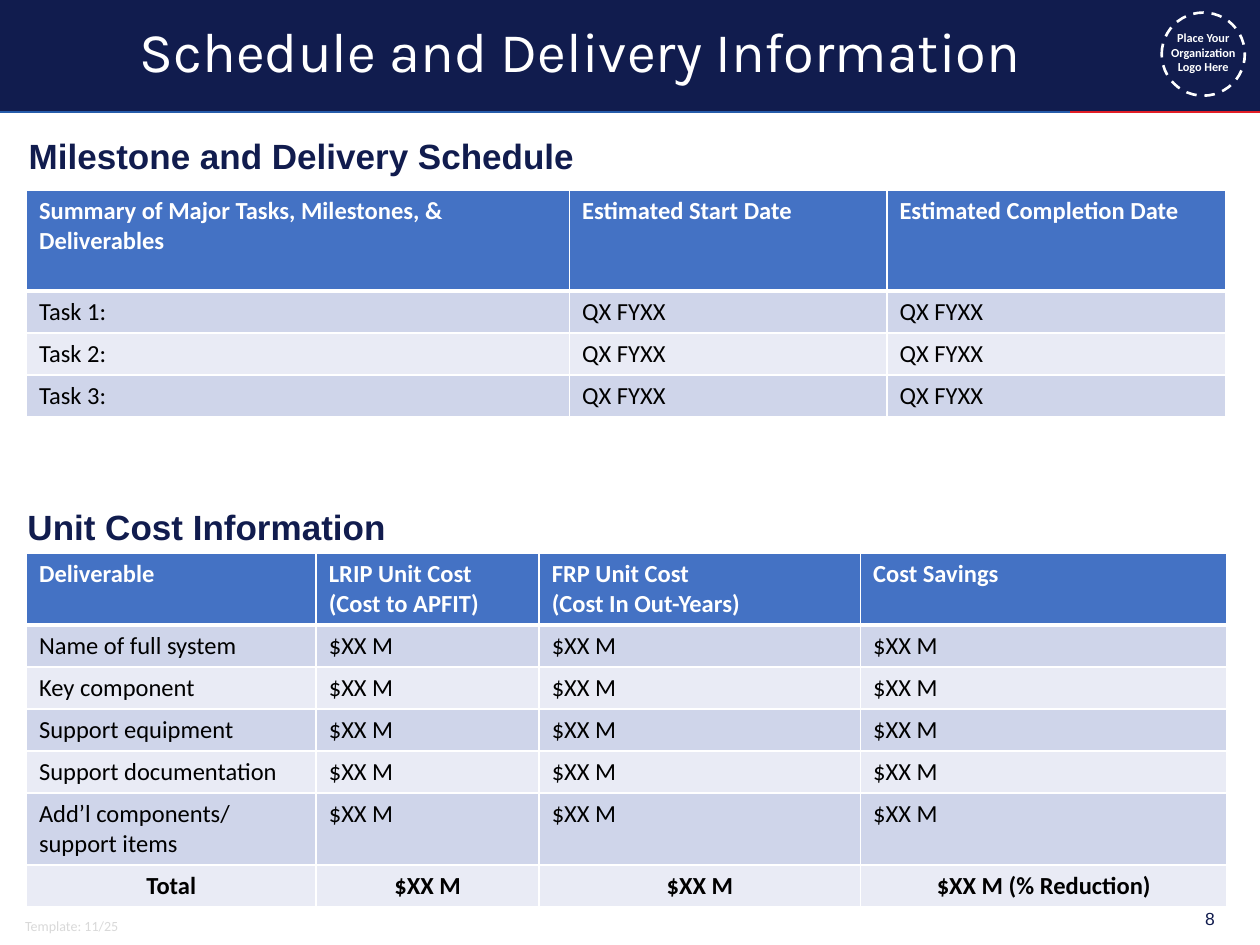
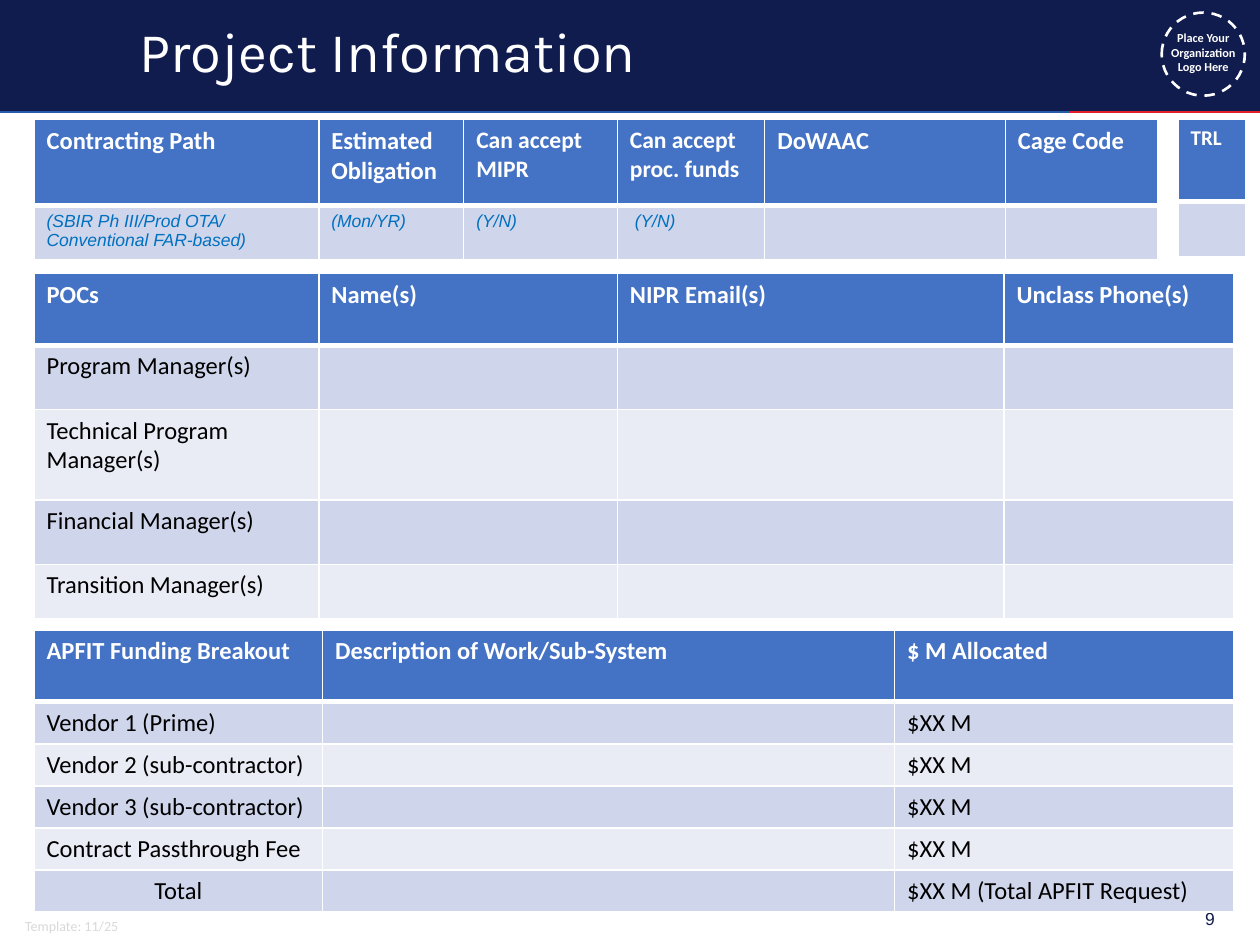
from dataclasses import dataclass, replace

from lxml.etree import SubElement
from pptx import Presentation
from pptx.dml.color import RGBColor
from pptx.enum.dml import MSO_LINE
from pptx.enum.shapes import MSO_CONNECTOR, MSO_SHAPE
from pptx.enum.text import MSO_ANCHOR, PP_ALIGN
from pptx.oxml.ns import qn
from pptx.util import Inches, Pt


@dataclass(frozen=True)
class TextStyle:
    font: str
    size: float
    color: str
    bold: bool = False
    italic: bool = False


@dataclass(frozen=True)
class Theme:
    navy: str = "111C4E"
    rule_blue: str = "265CAA"
    rule_red: str = "E21E26"
    white: str = "FFFFFF"
    header_fill: str = "4472C4"
    odd_row: str = "CFD5EA"
    even_row: str = "E9EBF5"
    title: TextStyle = TextStyle("Karla", 32, "FFFFFF")
    heading: TextStyle = TextStyle("Arial", 20, "111C4E", bold=True)
    page_number: TextStyle = TextStyle("Arial", 10, "111C4E")
    version: TextStyle = TextStyle("Calibri", 8, "D9D9D9")
    logo: TextStyle = TextStyle("Calibri", 7, "FFFFFF", bold=True)
    header: TextStyle = TextStyle("Calibri", 14, "FFFFFF", bold=True)
    body: TextStyle = TextStyle("Calibri", 14, "000000")
    hint: TextStyle = TextStyle("Arial", 10, "0070C0", italic=True)
    thin: float = 1
    thick: float = 3


THEME = Theme()

# The slide is a grid of 100 columns by 75 rows; every place is given in grid steps.
COLUMNS, ROWS = 100, 75
STEP = Inches(0.1)
BAND = 8.9
RULE_SPLIT = 84.9
LINE_ROW = 3.3      # a table row with one line of body text
TWO_LINE_ROW = 5.7  # a table row with two lines of body text


def write(frame, text, style, align=PP_ALIGN.LEFT):
    """Fill a text frame, one paragraph per line of text."""
    for index, line in enumerate(text.split("\n")):
        paragraph = frame.add_paragraph() if index else frame.paragraphs[0]
        paragraph.alignment = align
        if not line:
            SubElement(paragraph._p, qn("a:endParaRPr"), sz=str(int(style.size * 100)))
            continue
        run = paragraph.add_run()
        run.text = line
        run.font.name = style.font
        run.font.size = Pt(style.size)
        run.font.bold = style.bold
        run.font.italic = style.italic
        run.font.color.rgb = RGBColor.from_string(style.color)


def add_banded_table(slide, left, top, widths, heights, rows, body=THEME.body):
    place = [round(v * STEP) for v in (left, top, sum(widths), sum(heights))]
    table = slide.shapes.add_table(len(heights), len(widths), *place).table
    for column, width in zip(table.columns, widths):
        column.width = round(width * STEP)
    for r, (height, texts) in enumerate(zip(heights, rows)):
        table.rows[r].height = round(height * STEP)
        fill = THEME.header_fill if r == 0 else THEME.odd_row if r % 2 else THEME.even_row
        edges = {"L": THEME.thin, "R": THEME.thin,
                 "T": THEME.thick if r == 1 else THEME.thin,
                 "B": THEME.thick if r == 0 else THEME.thin}
        for c, text in enumerate(texts):
            cell = table.cell(r, c)
            properties = cell._tc.get_or_add_tcPr()
            for side, weight in edges.items():
                edge = SubElement(properties, qn(f"a:ln{side}"), w=str(Pt(weight)))
                paint = SubElement(edge, qn("a:solidFill"))
                SubElement(paint, qn("a:srgbClr"), val=THEME.white)
            cell.fill.solid()
            cell.fill.fore_color.rgb = RGBColor.from_string(fill)
            write(cell.text_frame, text, body if r else THEME.header)
    return table


deck = Presentation()
deck.slide_width, deck.slide_height = COLUMNS * STEP, ROWS * STEP

# Band, rules, logo place, title and footer, shared by both slides
pages = []
for number, title in ((8, "Schedule and Delivery Information"), (9, "Project Information")):
    slide = deck.slides.add_slide(deck.slide_layouts[6])
    pages.append(slide)

    band = slide.shapes.add_shape(MSO_SHAPE.RECTANGLE, 0, 0, deck.slide_width, round(BAND * STEP))
    band.shadow.inherit = False
    band.fill.solid()
    band.fill.fore_color.rgb = RGBColor.from_string(THEME.navy)
    band.line.fill.background()

    for start, color in ((0, THEME.rule_blue), (COLUMNS, THEME.rule_red)):
        ends = [round(v * STEP) for v in (start, BAND, RULE_SPLIT, BAND)]
        rule = slide.shapes.add_connector(MSO_CONNECTOR.STRAIGHT, *ends)
        rule.line.color.rgb = RGBColor.from_string(color)
        rule.line.width = Pt(THEME.thin)
        SubElement(rule._element.spPr, qn("a:effectLst"))

    ring_place = [round(v * STEP) for v in (92.2, 1, 6.6, 6.6)]
    ring = slide.shapes.add_shape(MSO_SHAPE.OVAL, *ring_place)
    ring.shadow.inherit = False
    ring.fill.background()
    ring.line.color.rgb = RGBColor.from_string(THEME.white)
    ring.line.width = Pt(1.5)
    ring.line.dash_style = MSO_LINE.DASH

    labels = [
        ((1, 72.3, 9.8, 2.4), "Template: 11/25", THEME.version, PP_ALIGN.LEFT, MSO_ANCHOR.TOP),
        ((91.7, 1.9, 7.6, 4.5), "Place Your Organization Logo Here", THEME.logo,
         PP_ALIGN.CENTER, MSO_ANCHOR.TOP),
        ((10.1, 0.6, 75.7, 7.4), title, THEME.title, PP_ALIGN.LEFT, MSO_ANCHOR.MIDDLE),
        ((RULE_SPLIT, 70.9, 12.5, 4), str(number), THEME.page_number,
         PP_ALIGN.RIGHT, MSO_ANCHOR.MIDDLE),
    ]
    for place, text, style, align, anchor in labels:
        frame = slide.shapes.add_textbox(*[round(v * STEP) for v in place]).text_frame
        frame.word_wrap = True
        frame.vertical_anchor = anchor
        write(frame, text, style, align)
        if style is THEME.title:
            frame.paragraphs[0].line_spacing = 0.9

schedule_page, project_page = pages

# Schedule and delivery
for place, text in (((1.3, 10.2, 45.6, 4.4), "Milestone and Delivery Schedule"),
                    ((1.2, 39.6, 30.7, 4.4), "Unit Cost Information")):
    heading = schedule_page.shapes.add_textbox(*[round(v * STEP) for v in place])
    heading.text_frame.word_wrap = False
    write(heading.text_frame, text, THEME.heading)

milestones = [["Summary of Major Tasks, Milestones, & Deliverables",
               "Estimated Start Date", "Estimated Completion Date"]]
milestones += [[f"Task {n}:", "QX FYXX", "QX FYXX"] for n in (1, 2, 3)]
add_banded_table(schedule_page, 2.1, 15.1, [43.1, 25.2, 26.9], [8] + [LINE_ROW] * 3, milestones)

deliverables = ["Name of full system", "Key component", "Support equipment",
                "Support documentation", "Add’l components/ support items"]
costs = [["Deliverable", "LRIP Unit Cost (Cost to APFIT)",
          "FRP Unit Cost\n(Cost In Out-Years)", "Cost Savings"]]
costs += [[name] + ["$XX M"] * 3 for name in deliverables]
costs.append(["Total", "$XX M", "$XX M", "$XX M (% Reduction)"])
unit_costs = add_banded_table(
    schedule_page, 2.1, 43.9, [23, 17.7, 25.5, 29.1],
    [TWO_LINE_ROW] + [LINE_ROW] * 4 + [TWO_LINE_ROW, LINE_ROW], costs)
for cell in unit_costs.rows[len(costs) - 1].cells:
    total = cell.text_frame.paragraphs[0]
    total.alignment = PP_ALIGN.CENTER
    total.runs[0].font.bold = True

# Project information
funding = [["APFIT Funding Breakout", "Description of Work/Sub-System", "$ M Allocated"]]
funding += [[source, "", "$XX M"] for source in (
    "Vendor 1 (Prime)", "Vendor 2 (sub-contractor)", "Vendor 3 (sub-contractor)",
    "Contract Passthrough Fee")]
funding.append(["Total", "", "$XX M (Total APFIT Request)"])
breakout = add_banded_table(project_page, 2.7, 50, [22.9, 45.4, 26.9],
                            [TWO_LINE_ROW] + [LINE_ROW] * 5, funding)
breakout.cell(len(funding) - 1, 0).text_frame.paragraphs[0].alignment = PP_ALIGN.CENTER

readiness = add_banded_table(project_page, 93.5, 9.5, [5.4], [6.5, 4.4], [["TRL"], [""]])
readiness.cell(0, 0).text_frame.paragraphs[0].runs[0].font.size = Pt(12)

contacts = [["POCs", "Name(s)", "NIPR Email(s)", "Unclass Phone(s)"]]
contacts += [[f"{role} Manager(s)", "", "", ""] for role in (
    "Program", "Technical Program", "Financial", "Transition")]
add_banded_table(project_page, 2.7, 21.7, [22.6, 23.7, 30.7, 18.2],
                 [TWO_LINE_ROW, 5.1, 7.2, 5.1, 4.3], contacts)

contracting = add_banded_table(
    project_page, 2.7, 9.5, [22.6, 11.5, 12.2, 11.7, 19.1, 12.1], [6.8, 4.3],
    [["Contracting Path", "Estimated Obligation", "Can accept MIPR",
      "Can accept proc. funds", "DoWAAC", "Cage Code"],
     ["(SBIR Ph III/Prod OTA/\nConventional FAR-based)", "(Mon/YR)", "(Y/N)", " (Y/N)", "", ""]],
    body=THEME.hint)
for acceptance in (2, 3):
    contracting.cell(0, acceptance).text_frame.paragraphs[0].runs[0].font.size = Pt(13.5)

deck.save("out.pptx")
